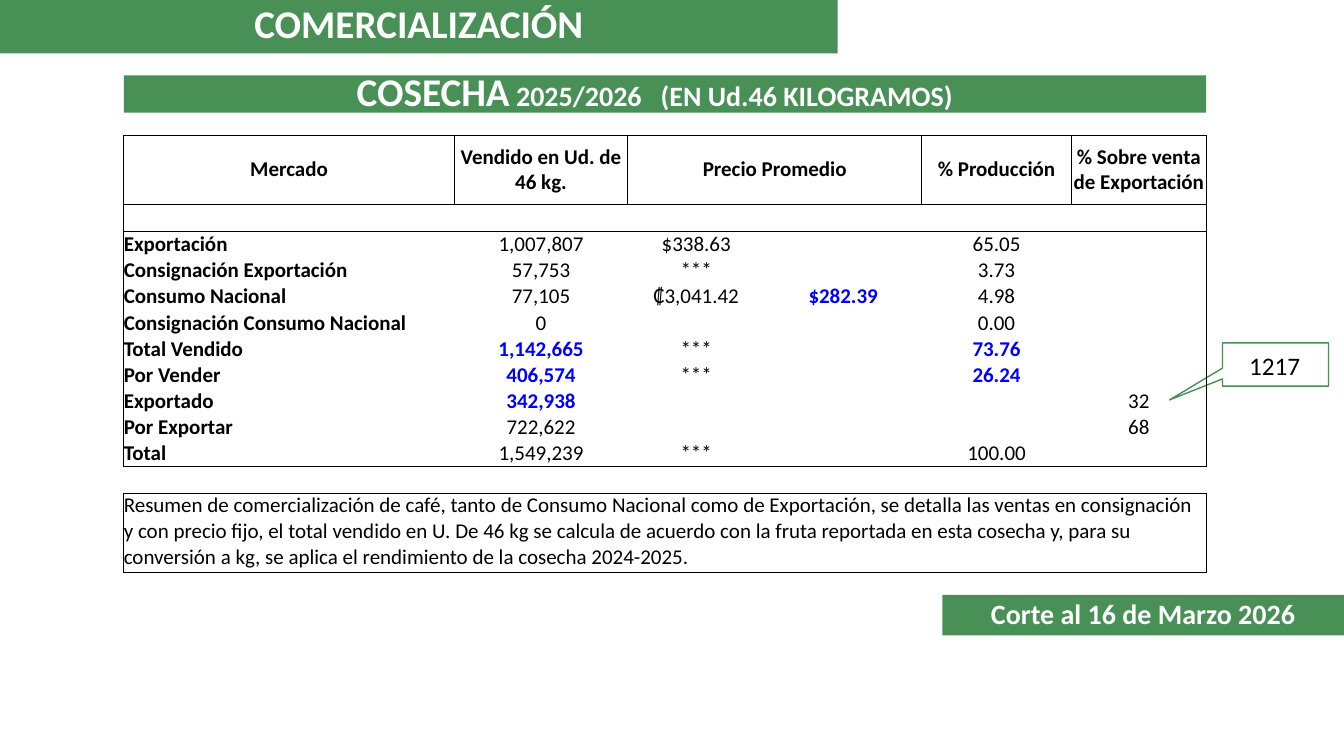
from lxml import etree
from pptx import Presentation
from pptx import util as u
from pptx.dml.color import RGBColor
from pptx.enum import shapes, text
from pptx.oxml.ns import qn

BANNERS = [
    ((3.12, 1.9, 27.28, 0.94), "m", 0.76,
     [("COSECHA", "title"), (" 2025/2026   (EN Ud.46 KILOGRAMOS)", "banner")]),
    ((23.75, 14.99, 10.12, 1.02), "m", 0.25, [("Corte al 16 de Marzo 2026", "banner")]),
    ((0, 0, 21.11, 1.35), "t", 0.25, [("COMERCIALIZACIÓN", "title")]),
]
HEADER = ["Mercado", "Vendido en Ud. de 46 kg.", "Precio Promedio", "",
          "% Producción", "% Sobre venta de Exportación"]
BODY = [
    ["", "", "", "", "", ""],
    ["Exportación", "1,007,807", "$338.63", "", "65.05", ""],
    ["Consignación Exportación", "57,753", "***", "", "3.73", ""],
    ["Consumo Nacional", "77,105", "₡3,041.42", "$282.39", "4.98", ""],
    ["Consignación Consumo Nacional", "0", "", "", "0.00", ""],
    ["Total Vendido", "1,142,665", "***", "", "73.76", ""],
    ["Por Vender", "406,574", "***", "", "26.24", ""],
    ["Exportado", "342,938", "", "", "", "32"],
    ["Por Exportar", "722,622", "", "", "", "68"],
    ["Total", "1,549,239", "***", "", "100.00", ""],
]
HIGHLIGHTS = {"$282.39", "1,142,665", "406,574", "342,938", "73.76", "26.24"}
NOTE = ("Resumen de comercialización de café, tanto de Consumo Nacional como de Exportación, "
        "se detalla las ventas en consignación y con precio fijo, el total vendido en U. De 46 kg "
        "se calcula de acuerdo con la fruta reportada en esta cosecha y, para su conversión a kg, "
        "se aplica el rendimiento de la cosecha 2024-2025.")
CALLOUT = "1217"

THEME = {
    "font": "Calibri",
    "green": "499057", "white": "FFFFFF", "black": "000000", "blue": "0000FF",
    "title": 28, "banner": 20, "callout": 18, "table": 15,
}
NO_STYLE = "{2D5ABB26-0587-4C30-8999-92F81FD0307C}"
COL_WIDTHS = [8.33, 4.37, 3.45, 3.96, 3.77, 3.4]
HEADER_H, ROW_H, NOTE_H = 1.76, 0.66, 1.99
ANCHORS = {"t": text.MSO_ANCHOR.TOP, "m": text.MSO_ANCHOR.MIDDLE, "b": text.MSO_ANCHOR.BOTTOM}
CENTER, LEFT = text.PP_ALIGN.CENTER, text.PP_ALIGN.LEFT


def cm(*values):
    return [u.Cm(v) for v in values]


def rgb(name):
    return RGBColor.from_string(THEME[name])


def style(r, size, color, bold=False):
    r.font.name = THEME["font"]
    r.font.size = u.Pt(THEME[size])
    r.font.bold = bold
    r.font.color.rgb = rgb(color)


def add_banner(s, box, anchor, right, runs):
    sp = s.shapes.add_shape(shapes.MSO_SHAPE.RECTANGLE, *cm(*box))
    sp.shadow.inherit = False
    sp.fill.solid()
    sp.fill.fore_color.rgb = rgb("green")
    sp.line.fill.background()
    tf = sp.text_frame
    tf.word_wrap = True
    tf.vertical_anchor = ANCHORS[anchor]
    tf.margin_right = u.Cm(right)
    p = tf.paragraphs[0]
    p.alignment = CENTER
    p.line_spacing = 0.9
    for words, size in runs:
        r = p.add_run()
        r.text = words
        style(r, size, "white", True)


def add_callout(s):
    sp = s.shapes.add_shape(shapes.MSO_SHAPE.RECTANGULAR_CALLOUT, *cm(30.81, 8.64, 2.67, 1.09))
    sp.adjustments[0], sp.adjustments[1] = -1, 0.82
    sp.shadow.inherit = False
    sp.fill.background()
    sp.line.color.rgb = rgb("green")
    sp.line.width = u.Pt(1)
    tf = s.shapes.add_textbox(*cm(31.12, 8.71, 2.01, 1.02)).text_frame
    tf.word_wrap = True
    tf.text = CALLOUT
    p = tf.paragraphs[0]
    p.alignment = CENTER
    style(p.runs[0], "callout", "black")


def set_borders(cell, edges):
    tcPr = cell._tc.get_or_add_tcPr()
    for edge in "LRTB":
        if edge in edges:
            ln = etree.SubElement(tcPr, qn("a:ln" + edge), w=str(u.Pt(0.5)))
            fill = etree.SubElement(ln, qn("a:solidFill"))
            etree.SubElement(fill, qn("a:srgbClr"), val=THEME["black"])


def cell_edges(i, j, last_row, last_col):
    if i == last_row - 1:
        return "TB"
    if i in (0, last_row):
        return "LRTB"
    return (("L" if j == 0 else "") + ("R" if j == last_col else "")
            + ("T" if i == 1 else "") + ("B" if i == last_row - 2 else ""))


def fill_cell(cell, words, anchor, alignment, color, bold):
    cell.margin_left = cell.margin_right = cell.margin_top = cell.margin_bottom = 0
    cell.vertical_anchor = ANCHORS[anchor]
    cell.text_frame.text = words
    p = cell.text_frame.paragraphs[0]
    p.alignment = alignment
    for r in p.runs:
        style(r, "table", color, bold)
    if not p.runs:
        etree.SubElement(p._p, qn("a:endParaRPr"), sz=str(THEME["table"] * 100))


def add_market_table(s):
    blank = [""] * len(HEADER)
    rows = [HEADER, *BODY, blank, [NOTE, *blank[1:]]]
    heights = [HEADER_H] + [ROW_H] * (len(BODY) + 1) + [NOTE_H]
    last_row, last_col = len(rows) - 1, len(HEADER) - 1
    tbl = s.shapes.add_table(len(rows), len(HEADER),
                             *cm(3.12, 3.4, sum(COL_WIDTHS), sum(heights))).table
    tbl.first_row = tbl.horz_banding = False
    tbl._tbl.tblPr.find(qn("a:tableStyleId")).text = NO_STYLE
    for col, width in zip(tbl.columns, COL_WIDTHS):
        col.width = u.Cm(width)
    for row, height in zip(tbl.rows, heights):
        row.height = u.Cm(height)
    tbl.cell(0, 2).merge(tbl.cell(0, 3))
    tbl.cell(last_row, 0).merge(tbl.cell(last_row, last_col))
    for i, values in enumerate(rows):
        for j, words in enumerate(values):
            cell = tbl.cell(i, j)
            blue = words in HIGHLIGHTS
            header, note = i == 0, i == last_row
            anchor = "t" if note else "m" if header or words[:1] in ("$", "₡") else "b"
            fill_cell(cell, words, anchor,
                      LEFT if j == 0 and not header else CENTER,
                      "blue" if blue else "black",
                      blue or header or (j == 0 and not note))
            edges = cell_edges(i, j, last_row, last_col)
            set_borders(cell, edges.replace("L", "") if cell.is_spanned else edges)
            cell.fill.background()


def main():
    prs = Presentation()
    prs.slide_width, prs.slide_height = cm(33.87, 19.05)
    s = prs.slides.add_slide(prs.slide_layouts[6])
    for banner in BANNERS:
        add_banner(s, *banner)
    add_callout(s)
    add_market_table(s)
    prs.save("out.pptx")


if __name__ == "__main__":
    main()
